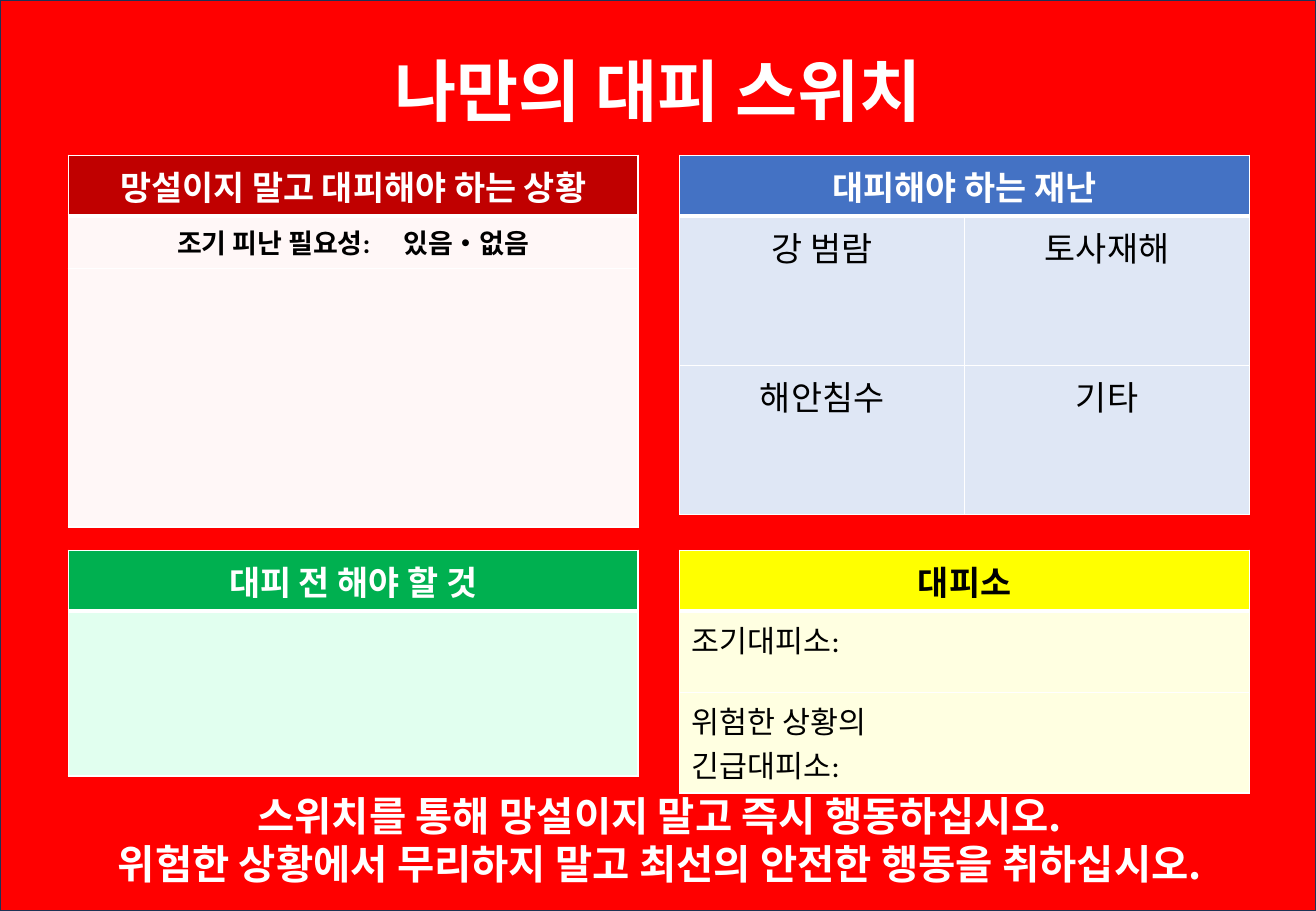
from lxml.etree import SubElement
from pptx import Presentation
from pptx.dml.color import RGBColor
from pptx.enum.shapes import MSO_SHAPE as Shape
from pptx.enum.text import MSO_ANCHOR as Anchor, PP_ALIGN as Align
from pptx.oxml.ns import qn
from pptx.util import Cm, Pt

WIDTH, HEIGHT = 27.51, 19.05
LEFT_COL, RIGHT_COL, CARD_WIDTH = 1.43, 14.21, 11.91
TOP_ROW, BOTTOM_ROW = 3.25, 11.51
HEAD_HEIGHT = 1.27
KOREAN = "Noto Sans CJK KR"


def paint(target, color):
    """Give a fill, or the fill of a font or line, a solid hex colour."""
    target.solid()
    target.fore_color.rgb = RGBColor.from_string(color)


def write(frame, text, *, size=20, font="Calibri", color="FFFFFF", bold=False,
          align=Align.CENTER, anchor=Anchor.TOP):
    """Fill a text frame, one paragraph for each line of text."""
    frame.text = text
    frame.word_wrap = True
    frame.vertical_anchor = anchor
    for line in frame.paragraphs:
        line.alignment = align
        for run in line.runs:
            run.font.size, run.font.bold, run.font.name = Pt(size), bold, font
            paint(run.font.fill, color)
            SubElement(run.font._element, qn("a:ea"), typeface=KOREAN)


def add_borders(cell, bottom=1):
    """Draw white cell borders; they must come before the fill."""
    props = cell._tc.get_or_add_tcPr()
    for side, width in (("L", 1), ("R", 1), ("T", 1), ("B", bottom)):
        line = SubElement(props, qn(f"a:ln{side}"), w=str(Pt(width)))
        fill = SubElement(line, qn("a:solidFill"))
        SubElement(fill, qn("a:srgbClr"), val="FFFFFF")


class SwitchCard:
    """The current slide and the shared look of its parts."""

    def __init__(self, deck):
        self.slide = deck.slides.add_slide(deck.slide_layouts[5])
        self.shapes = self.slide.shapes

    def backdrop(self, color, edge):
        panel = self.shapes.add_shape(Shape.RECTANGLE, 0, 0, Cm(WIDTH), Cm(HEIGHT))
        panel.shadow.inherit = False
        paint(panel.fill, color)
        paint(panel.line.fill, edge)
        panel.line.width = Pt(1)
        self.shapes.title.element.addprevious(panel.element)

    def title(self, text, top, height):
        heading = self.shapes.title
        heading.left, heading.top = Cm(0), Cm(top)
        heading.width, heading.height = Cm(WIDTH), Cm(height)
        write(heading.text_frame, text, size=40, font=KOREAN, bold=True,
              anchor=Anchor.MIDDLE)

    def message(self, text, left, top, width, height):
        box = self.shapes.add_textbox(Cm(left), Cm(top), Cm(width), Cm(height))
        write(box.text_frame, text, size=24, font=KOREAN, bold=True,
              anchor=Anchor.MIDDLE)

    def section(self, left, top, row_heights, heading, rows, head_fill, body_fill,
                head_color="FFFFFF", **body_style):
        """A table with one heading across it and rows of plain cells."""
        heights = [HEAD_HEIGHT, *row_heights]
        columns = len(rows[0])
        table = self.shapes.add_table(len(heights), columns, Cm(left), Cm(top),
                                      Cm(CARD_WIDTH), Cm(sum(heights))).table
        for row, height in zip(table.rows, heights):
            row.height = Cm(height)
        if columns > 1:
            table.cell(0, 0).merge(table.cell(0, columns - 1))
        for column in range(columns):
            head = table.cell(0, column)
            add_borders(head, bottom=3)
            paint(head.fill, head_fill)
        head = table.cell(0, 0)
        write(head.text_frame, heading, color=head_color, bold=True)
        head.vertical_anchor = Anchor.MIDDLE
        for r, row in enumerate(rows, 1):
            for c, text in enumerate(row):
                cell = table.cell(r, c)
                add_borders(cell)
                paint(cell.fill, body_fill)
                if text:
                    write(cell.text_frame, text, color="000000", **body_style)


def main():
    deck = Presentation()
    deck.slide_width, deck.slide_height = Cm(WIDTH), Cm(HEIGHT)
    card = SwitchCard(deck)

    # Backdrop and title
    card.backdrop("FF0000", "1E3256")
    card.title("나만의 대피 스위치", 0.97, 1.8)

    # Closing message
    card.message("스위치를 통해 망설이지 말고 즉시 행동하십시오.\n"
                 "위험한 상황에서 무리하지 말고 최선의 안전한 행동을 취하십시오.",
                 0.43, 16.36, 26.72, 2.39)

    # Situations and disasters
    card.section(LEFT_COL, TOP_ROW, [1.09, 5.41],
                 "망설이지 말고 대피해야 하는 상황",
                 [["조기 피난 필요성: 　있음・없음"], [""]],
                 "C00000", "FFF7F7", size=16, bold=True)
    card.section(RIGHT_COL, TOP_ROW, [3.12, 3.12], "대피해야 하는 재난",
                 [["강 범람", "토사재해"], ["해안침수", "기타"]],
                 "4472C4", "DFE7F5", font="Arial")

    # Preparation and shelters
    card.section(LEFT_COL, BOTTOM_ROW, [3.45], "대피 전 해야 할 것",
                 [[""]], "00B050", "E1FFEF")
    card.section(RIGHT_COL, BOTTOM_ROW, [1.7, 2.1], "대피소",
                 [["조기대피소:"], ["위험한 상황의\n긴급대피소:"]],
                 "FFFF00", "FFFFE1", head_color="000000", size=18,
                 align=Align.LEFT)

    deck.save("out.pptx")


if __name__ == "__main__":
    main()
